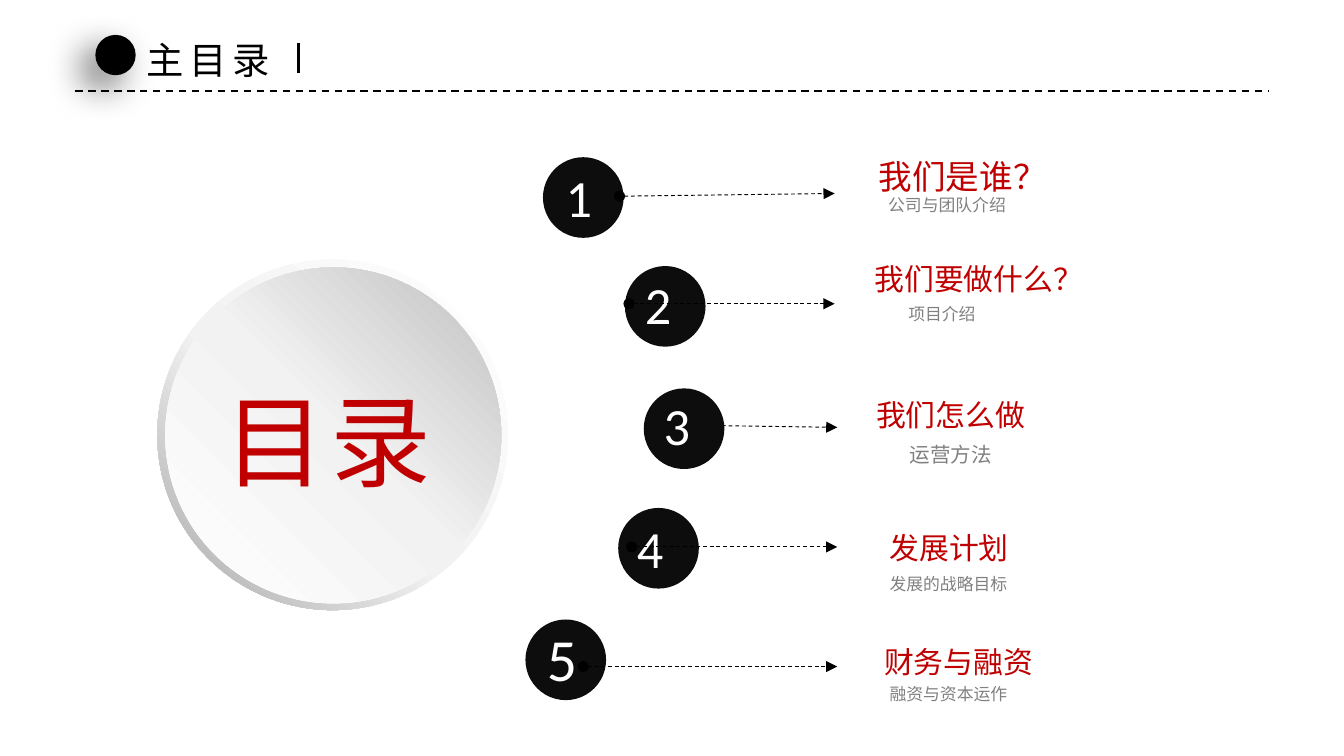
from copy import deepcopy

from lxml import etree
from pptx import Presentation
from pptx.dml.color import RGBColor
from pptx.enum.dml import MSO_LINE
from pptx.enum.shapes import MSO_CONNECTOR, MSO_SHAPE
from pptx.enum.text import MSO_AUTO_SIZE, PP_ALIGN
from pptx.oxml.ns import qn
from pptx.util import Inches, Pt

BLACK = RGBColor(0x00, 0x00, 0x00)
DISC = RGBColor(0x0D, 0x0D, 0x0D)
WHITE = RGBColor(0xFF, 0xFF, 0xFF)
PALE = RGBColor(0xF2, 0xF2, 0xF2)
SILVER = RGBColor(0xBF, 0xBF, 0xBF)
STEEL = RGBColor(0xA6, 0xA6, 0xA6)
RED = RGBColor(0xC0, 0x00, 0x00)
GRAY = RGBColor(0x80, 0x80, 0x80)

OVAL, DONUT = MSO_SHAPE.OVAL, MSO_SHAPE.DONUT
STRAIGHT, DASH = MSO_CONNECTOR.STRAIGHT, MSO_LINE.DASH
GROW, JUSTIFY = MSO_AUTO_SIZE.SHAPE_TO_FIT_TEXT, PP_ALIGN.JUSTIFY
LATIN, CHINESE = "Calibri", "Noto Sans CJK SC"

# A 16:9 slide
presentation = Presentation()
presentation.slide_width = Inches(10)
presentation.slide_height = Inches(10) * 9 // 16
slide = presentation.slides.add_slide(presentation.slide_layouts[6])
shapes = slide.shapes


def add_text(text, box, size, color, font=CHINESE, wrap=False, spacing=0, align=None):
    shape = shapes.add_textbox(*[Inches(value) for value in box])
    frame = shape.text_frame
    frame.word_wrap = wrap
    frame.auto_size = GROW
    paragraph = frame.paragraphs[0]
    paragraph.alignment = align
    run = paragraph.add_run()
    run.text = text
    run.font.size = Pt(size)
    run.font.name = font
    run.font.color.rgb = color
    properties = run.font._element
    etree.SubElement(properties, qn("a:ea")).set("typeface", font)
    if spacing:
        properties.set("spc", str(spacing * 100))


def add_line(start, end, width, dashed=True, arrow=False):
    line = shapes.add_connector(STRAIGHT, *[Inches(value) for value in start + end])
    line.line.color.rgb = BLACK
    line.line.width = Pt(width)
    if dashed:
        line.line.dash_style = DASH
    if arrow:
        outline = line.line._get_or_add_ln()
        etree.SubElement(outline, qn("a:headEnd")).set("type", "oval")
        etree.SubElement(outline, qn("a:tailEnd")).set("type", "triangle")
    etree.SubElement(line._element.spPr, qn("a:effectLst"))


# Numbered discs and their arrows; the arrow of disc 3 lies behind it
DISC_SIZE = 0.6
discs = [
    # number, disc left and top, number box, size
    ("3", 4.79, 2.89, (4.84, 2.88, 0.51, 0.57), 28),
    ("2", 4.65, 1.98, (4.70, 1.98, 0.51, 0.57), 28),
    ("1", 4.04, 1.17, (4.11, 1.18, 0.51, 0.57), 28),
    ("4", 4.60, 3.78, (4.64, 3.79, 0.51, 0.57), 28),
    ("5", 3.91, 4.61, (3.97, 4.58, 0.55, 0.64), 32),
]
add_line((4.84, 3.16), (6.23, 3.18), 0.5, arrow=True)
for number, left, top, box, size in discs:
    disc = shapes.add_shape(OVAL, Inches(left), Inches(top), Inches(DISC_SIZE), Inches(DISC_SIZE))
    disc.shadow.inherit = False
    disc.fill.solid()
    disc.fill.fore_color.rgb = DISC
    disc.line.fill.background()
    add_text(number, box, size, WHITE, font=LATIN)

# Large button: a shaded rim around a shaded face
button_parts = [
    # preset, left, top, size, middle stop, last colour, angle
    (DONUT, 1.17, 1.93, 2.61, 0.55, STEEL, 225),
    (OVAL, 1.23, 1.99, 2.5, 0.51, SILVER, 45),
]
for preset, left, top, size, middle, last_color, angle in button_parts:
    part = shapes.add_shape(preset, Inches(left), Inches(top), Inches(size), Inches(size))
    part.shadow.inherit = False
    part.line.fill.background()
    if preset == DONUT:
        part.adjustments[0] = 0.049
    part.fill.gradient()
    part.fill.gradient_angle = angle
    first_stop = part._element.spPr.find(".//" + qn("a:gs"))
    first_stop.addnext(deepcopy(first_stop))
    stops = zip(part.fill.gradient_stops, (0, middle, 1), (WHITE, PALE, last_color))
    for stop, position, color in stops:
        stop.position = position
        stop.color.rgb = color

# Title bar with a shadowed dot
add_line((0.56, 0.68), (9.44, 0.68), 1)
dot = shapes.add_shape(OVAL, Inches(0.71), Inches(0.26), Inches(0.3), Inches(0.3))
dot.fill.solid()
dot.fill.fore_color.rgb = BLACK
dot.line.fill.background()
dot.shadow.inherit = False
effects = dot._element.spPr.find(qn("a:effectLst"))
shadow = etree.SubElement(effects, qn("a:outerShdw"), blurRad=str(Pt(20)), dist=str(Pt(10)),
                          dir=str(135 * 60000), algn="tr", rotWithShape="0")
shadow_color = etree.SubElement(shadow, qn("a:srgbClr"), val=str(BLACK))
etree.SubElement(shadow_color, qn("a:alpha"), val="60000")
add_text("主目录", (0.99, 0.23, 1.17, 0.44), 20, BLACK, spacing=3)
add_line((2.22, 0.32), (2.22, 0.54), 1.5, dashed=False)

# Button caption
add_text("目录", (1.57, 2.77, 1.8, 1.01), 54, RED, spacing=3)

# Section headings with their subtitles
sections = [
    # heading, box, size, subtitle, left and top, size
    ("我们是谁？", (6.44, 1.11, 1.41, 0.40), 18, "公司与团队介绍", 6.51, 1.40, 9),
    ("我们要做什么？", (6.41, 1.89, 1.74, 0.37), 16, "项目介绍", 6.66, 2.21, 9),
    ("我们怎么做", (6.42, 2.90, 1.41, 0.37), 16, "运营方法", 6.67, 3.24, 11),
    ("发展计划", (6.52, 3.89, 1.41, 0.37), 16, "发展的战略目标", 6.52, 4.22, 9),
    ("财务与融资", (6.48, 4.74, 1.41, 0.37), 16, "融资与资本运作", 6.52, 5.04, 9),
]
for heading, box, size, subtitle, left, top, subtitle_size in sections:
    add_text(heading, box, size, RED, wrap=True)
    add_text(subtitle, (left, top, 1.88, 0.25), subtitle_size, GRAY, wrap=True, align=JUSTIFY)

# Arrows lying over the other discs
for start, end in [
    ((4.61, 1.46), (6.21, 1.44)),
    ((4.68, 2.26), (6.21, 2.26)),
    ((4.70, 4.07), (6.23, 4.07)),
    ((4.34, 4.96), (6.23, 4.96)),
]:
    add_line(start, end, 0.5, arrow=True)

presentation.save("out.pptx")
